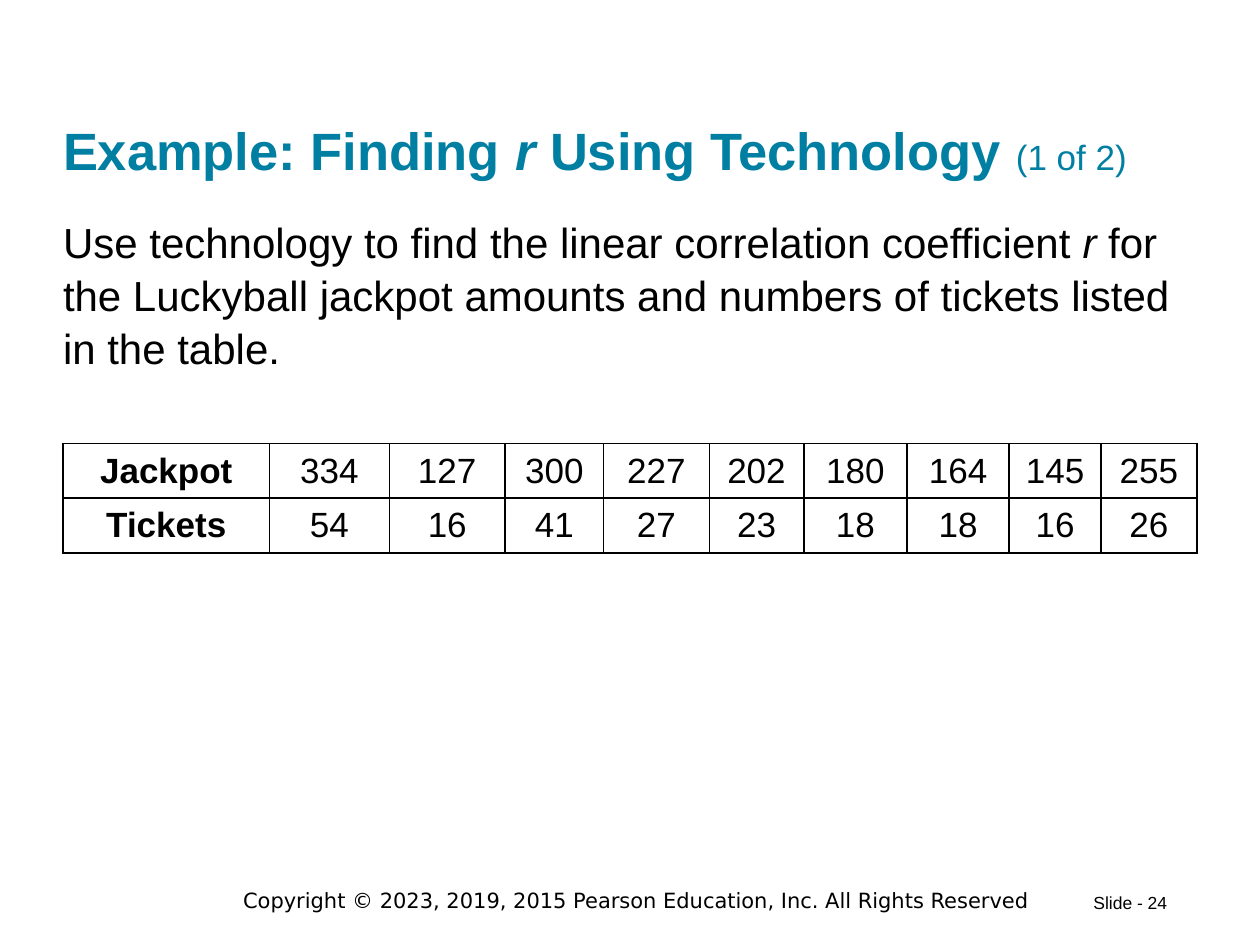
from pptx import Presentation
from pptx import util as u
from pptx.dml.color import RGBColor
from pptx.enum import text as t
from pptx.oxml import parse_xml
from pptx.oxml.ns import nsdecls

TEAL = RGBColor(0x00, 0x7F, 0xA3)
BLACK = RGBColor(0x00, 0x00, 0x00)

WIDTHS = (1.64, 0.95, 0.92, 0.78, 0.84, 0.75, 0.82, 0.81, 0.73, 0.76)
ROWS = (
    ("Jackpot", 334, 127, 300, 227, 202, 180, 164, 145, 255),
    ("Tickets", 54, 16, 41, 27, 23, 18, 18, 16, 26),
)


def inches(box):
    return [u.Inches(side) for side in box]


def write(par, words, size=20, color=BLACK, bold=False, italic=False, face="Arial"):
    run = par.add_run()
    run.text = words
    font = run.font
    font.name, font.size = face, u.Pt(size)
    font.bold, font.italic = bold, italic
    font.color.rgb = color


def set_frame(frame, inset=(0, 0), wrap=True, anchor=t.MSO_ANCHOR.TOP,
              align=t.PP_ALIGN.LEFT, fit=t.MSO_AUTO_SIZE.NONE):
    frame.word_wrap = wrap
    frame.auto_size = fit
    frame.vertical_anchor = anchor
    frame.margin_left = frame.margin_right = u.Inches(inset[0])
    frame.margin_top = frame.margin_bottom = u.Inches(inset[1])
    par = frame.paragraphs[0]
    par.alignment = align
    return par


def add_title(slide, box):
    title = slide.shapes.title
    title.left, title.top, title.width, title.height = inches(box)
    par = set_frame(title.text_frame, anchor=t.MSO_ANCHOR.BOTTOM)
    write(par, "Example: Finding ", size=30, color=TEAL, bold=True)
    write(par, "r", size=30, color=TEAL, bold=True, italic=True)
    write(par, " Using Technology ", size=30, color=TEAL, bold=True)
    write(par, "(1 of 2)", color=TEAL)


def add_body(slide, box):
    shape = slide.shapes.add_textbox(*inches(box))
    par = set_frame(shape.text_frame)
    par.line_spacing = 1.05
    write(par, "Use technology to find the linear correlation coefficient ", size=24)
    write(par, "r ", size=24, italic=True)
    write(par, "for the Luckyball jackpot amounts and numbers of tickets "
               "listed in the table.", size=24)


def add_edges(cell):
    props = cell._tc.get_or_add_tcPr()
    for place, side in enumerate(("lnL", "lnR", "lnT", "lnB")):
        props.insert(place, parse_xml(
            f'<a:{side} {nsdecls("a")} w="{u.Pt(1)}"><a:solidFill>'
            f'<a:srgbClr val="{BLACK}"/></a:solidFill></a:{side}>'))


def add_data(slide, box):
    frame = slide.shapes.add_table(len(ROWS), len(WIDTHS), *inches(box))
    table = frame.table
    table.first_row = table.horz_banding = False
    for col, width in zip(table.columns, WIDTHS):
        col.width = u.Inches(width)
    for i, row in enumerate(ROWS):
        table.rows[i].height = u.Inches(0.41)
        for j, value in enumerate(row):
            cell = table.cell(i, j)
            cell.fill.background()
            cell.vertical_anchor = t.MSO_ANCHOR.MIDDLE
            par = cell.text_frame.paragraphs[0]
            par.alignment = t.PP_ALIGN.CENTER
            write(par, str(value), bold=j == 0)
            add_edges(cell)


def add_rights(slide, box):
    shape = slide.shapes.add_textbox(*inches(box))
    par = set_frame(shape.text_frame, inset=(0.1, 0.05),
                    anchor=t.MSO_ANCHOR.MIDDLE, align=t.PP_ALIGN.CENTER)
    write(par, "Copyright © 2023, 2019, 2015 Pearson Education, Inc. "
               "All Rights Reserved", size=12, face="DejaVu Sans")


def add_number(slide, box):
    shape = slide.shapes.add_textbox(*inches(box))
    par = set_frame(shape.text_frame, inset=(0.1, 0.05), wrap=False,
                    fit=t.MSO_AUTO_SIZE.SHAPE_TO_FIT_TEXT)
    write(par, "Slide - 24", size=10)


def main():
    deck = Presentation()
    deck.slide_width, deck.slide_height = u.Inches(10), u.Inches(7.5)
    slide = deck.slides.add_slide(deck.slide_layouts[5])
    add_rights(slide, (1.76, 7.03, 6.58, 0.22))
    add_number(slide, (8.58, 7.03, 0.81, 0.27))
    add_title(slide, (0.5, 0.24, 9, 1.2))
    add_body(slide, (0.5, 1.7, 8.85, 1.43))
    add_data(slide, (0.5, 3.52, 9, 0.82))
    deck.save("out.pptx")


if __name__ == "__main__":
    main()
